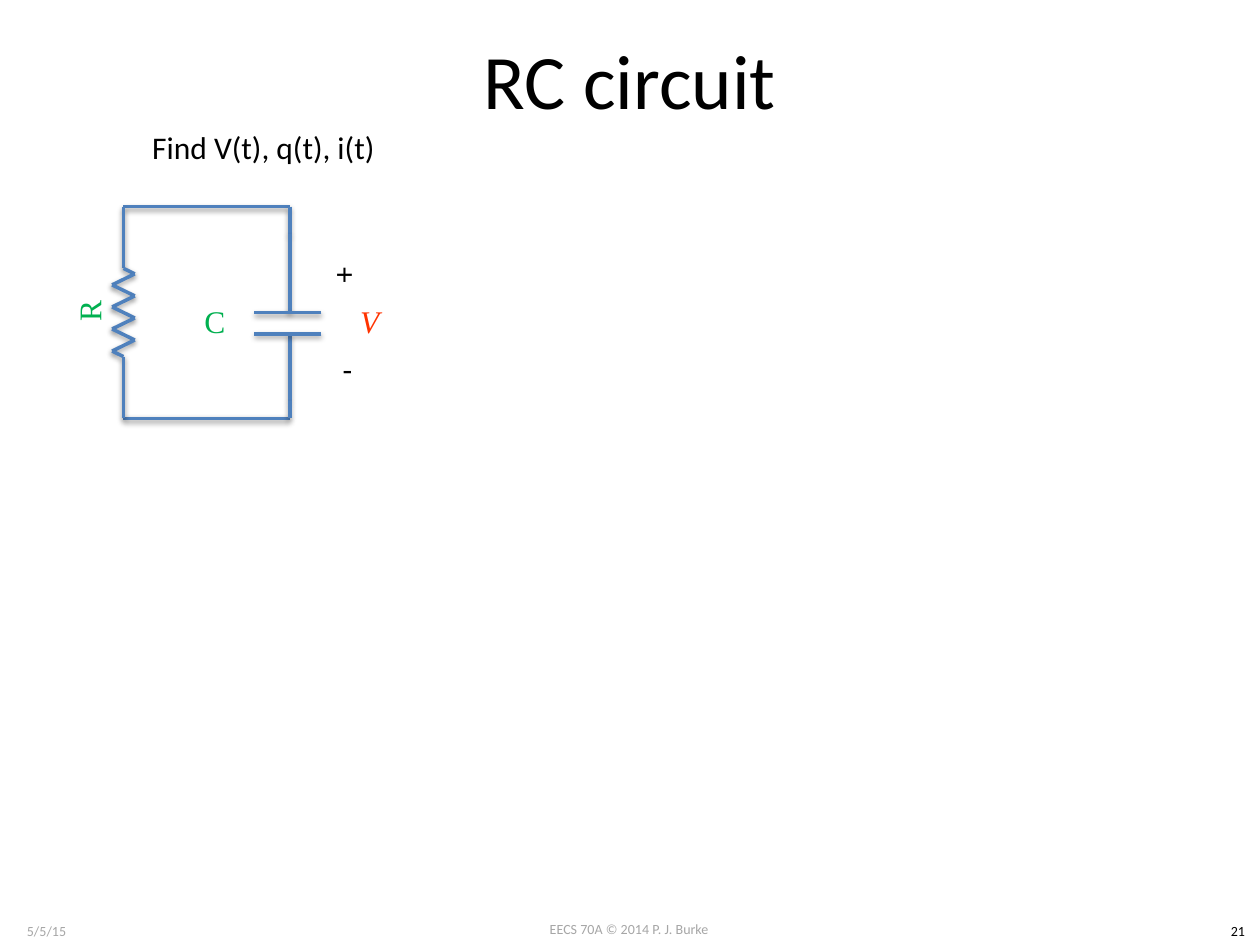
"""Build the RC circuit slide."""
from dataclasses import dataclass
from itertools import pairwise

from lxml.etree import SubElement
from pptx import Presentation
from pptx.dml.color import RGBColor
from pptx.enum.shapes import MSO_CONNECTOR
from pptx.enum.text import MSO_ANCHOR, MSO_AUTO_SIZE, PP_ALIGN
from pptx.oxml.ns import qn
from pptx.util import Inches, Pt


@dataclass(frozen=True)
class Theme:
    sans: str = "Calibri"
    serif: str = "Times New Roman"
    title: int = 44
    body: int = 18
    footer: int = 8
    ink: str = "000000"
    muted: str = "A6A6A6"
    component: str = "00B050"
    voltage: str = "FF3300"
    wire: str = "4F81BD"
    wire_width: int = 2


THEME = Theme()
WIDTH, HEIGHT = 10, 7.5

FOOTERS = [
    ("EECS 70A © 2014 P. J. Burke", (3.83, 7.26, 2.33, 0.24), THEME.muted),
    ("5/5/15", (0, 7.27, 0.74, 0.24), THEME.muted),
    ("21", (9.65, 7.27, 0.35, 0.24), THEME.ink),
]
TITLE = ("RC circuit", (0.05 * WIDTH, 0, 0.9 * WIDTH, HEIGHT / 6))
TASK = ("Find V(t), q(t), i(t)", (1.11, 0.97, 1.99, 0.4))
POLARITY = [
    ("+", (2.59, 1.99, 0.33, 0.4), 90),
    ("-", (2.62, 2.73, 0.28, 0.4), 0),
]
CAPACITOR_SYMBOLS = [
    ("C", (1.11, 2.18, 1.19, 0.73), THEME.component, 0, False),
    ("V", (2.55, 2.24, 0.77, 0.61), THEME.voltage, 0, True),
]
RESISTOR_SYMBOL = ("R", (0.11, 2.1, 1.19, 0.73), THEME.component, 270, False)

LEFT, RIGHT, TOP, BOTTOM = 0.98, 2.3, 1.64, 3.32
PLATES = (2.48, 2.65)
PLATE_LEFT, PLATE_RIGHT = 2.02, 2.55
LEADS = (1.86, 3.18)
RESISTOR_TOP, RESISTOR_BOTTOM = 2.13, 2.83
TEETH, TOOTH = 8, 0.09


def add_text(shapes, text, box, size=THEME.body, color=THEME.ink, font=THEME.sans,
             centered=False, middle=False, wrap=True, rotation=0, italic=False):
    shape = shapes.add_textbox(*map(Inches, box))
    shape.rotation = rotation
    frame = shape.text_frame
    frame.word_wrap = wrap
    frame.auto_size = MSO_AUTO_SIZE.NONE if middle else MSO_AUTO_SIZE.SHAPE_TO_FIT_TEXT
    frame.vertical_anchor = MSO_ANCHOR.MIDDLE if middle else MSO_ANCHOR.TOP
    paragraph = frame.paragraphs[0]
    paragraph.text = text
    paragraph.alignment = PP_ALIGN.CENTER if centered else PP_ALIGN.LEFT
    paragraph.font.name = font
    paragraph.font.size = Pt(size)
    paragraph.font.italic = italic
    paragraph.font.color.rgb = RGBColor.from_string(color)


def add_symbol(shapes, text, box, color, rotation, italic):
    add_text(shapes, text, box, color=color, font=THEME.serif, centered=True,
             middle=True, rotation=rotation, italic=italic)


def add_wire(shapes, start, end):
    wire = shapes.add_connector(MSO_CONNECTOR.STRAIGHT, *map(Inches, (*start, *end)))
    wire.line.color.rgb = RGBColor.from_string(THEME.wire)
    wire.line.width = Pt(THEME.wire_width)
    effects = SubElement(wire._element.spPr, qn("a:effectLst"))
    shadow = SubElement(effects, qn("a:outerShdw"), blurRad=str(Pt(3.1)),
                        dist=str(Pt(1.6)), dir="5400000", rotWithShape="0")
    color = SubElement(shadow, qn("a:srgbClr"), val=THEME.ink)
    SubElement(color, qn("a:alpha"), val="38000")


def add_path(shapes, points):
    for start, end in pairwise(points):
        add_wire(shapes, start, end)


def add_capacitor(shapes):
    add_path(shapes, [(RIGHT, y) for y in (TOP, LEADS[0], PLATES[0])])
    add_path(shapes, [(RIGHT, y) for y in (PLATES[1], LEADS[1], BOTTOM)])
    for y in PLATES:
        add_wire(shapes, (PLATE_RIGHT, y), (PLATE_LEFT, y))
    for symbol in CAPACITOR_SYMBOLS:
        add_symbol(shapes, *symbol)
    for sign, box, rotation in POLARITY:
        add_text(shapes, sign, box, wrap=False, rotation=rotation)


def add_resistor(shapes):
    add_symbol(shapes, *RESISTOR_SYMBOL)
    pitch = (RESISTOR_BOTTOM - RESISTOR_TOP) / TEETH
    zigzag = [(LEFT + TOOTH * (-1) ** tooth, RESISTOR_TOP + pitch * (tooth + 0.5))
              for tooth in range(TEETH)]
    add_path(shapes, [(LEFT, TOP), (LEFT, RESISTOR_TOP), *zigzag,
                      (LEFT, RESISTOR_BOTTOM), (LEFT, BOTTOM)])


def main():
    presentation = Presentation()
    presentation.slide_width, presentation.slide_height = Inches(WIDTH), Inches(HEIGHT)
    slide = presentation.slides.add_slide(presentation.slide_layouts[6])
    for text, box, color in FOOTERS:
        add_text(slide.shapes, text, box, THEME.footer, color, centered=True)
    add_text(slide.shapes, *TITLE, THEME.title, centered=True, middle=True)
    add_text(slide.shapes, *TASK, wrap=False)
    for y in (TOP, BOTTOM):
        add_wire(slide.shapes, (LEFT, y), (RIGHT, y))
    for add_component in (add_capacitor, add_resistor):
        add_component(slide.shapes.add_group_shape().shapes)
    presentation.save("out.pptx")


if __name__ == "__main__":
    main()
